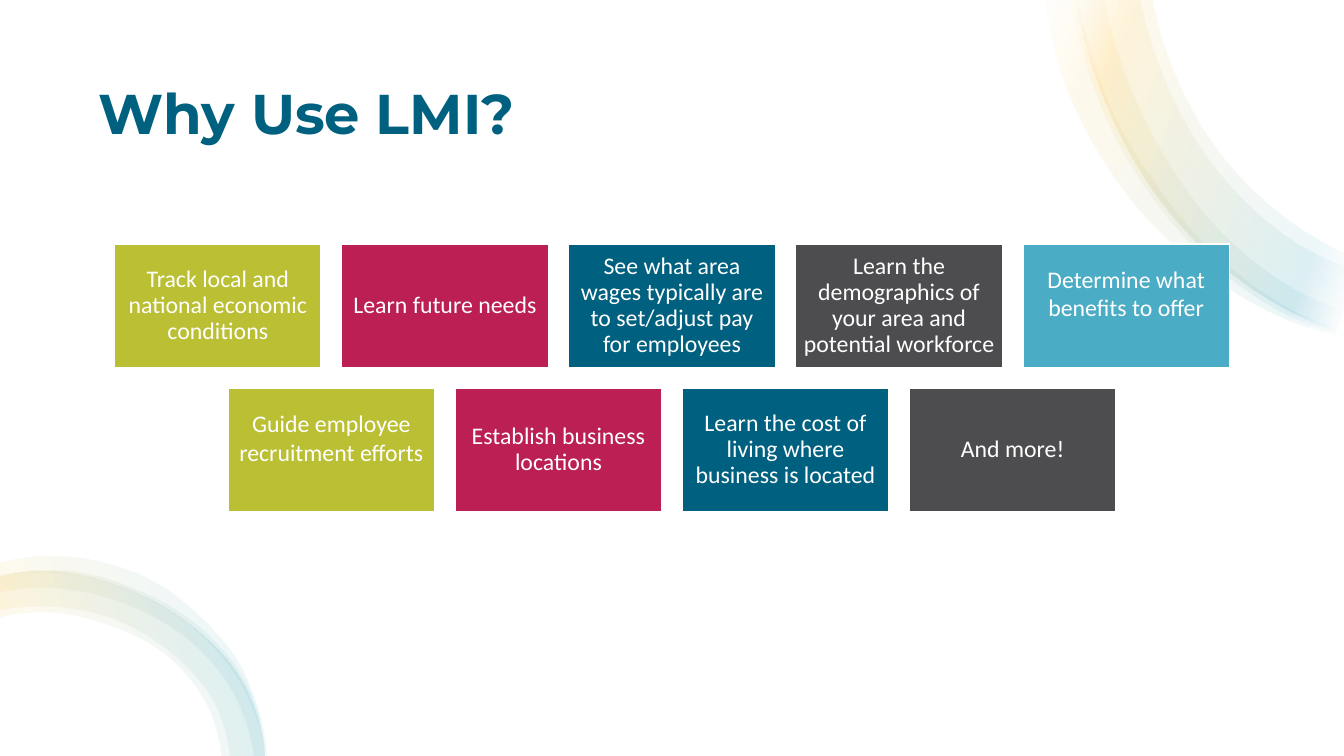
from dataclasses import dataclass
from math import dist

from pptx import Presentation
from pptx.dml.color import RGBColor
from pptx.enum.shapes import MSO_SHAPE
from pptx.enum.text import MSO_ANCHOR, PP_ALIGN
from pptx.oxml import parse_xml
from pptx.oxml.ns import nsdecls, qn
from pptx.slide import Slide
from pptx.util import Pt

RECTANGLE = MSO_SHAPE.RECTANGLE
MIDDLE = MSO_ANCHOR.MIDDLE
CENTER = PP_ALIGN.CENTER

COLORS = {
    "white": "FFFFFF",
    "lime": "BABF33",
    "berry": "BB1F53",
    "teal": "00607F",
    "charcoal": "4D4D4F",
    "sky": "4BACC6",
    "gold": "FFC843",
}
PAGE_WIDTH, PAGE_HEIGHT = 960, 540
CARD_WIDTH, CARD_HEIGHT = 147.6, 88.4
CARD_GAP = 14.6
CARDS_TOP = 174.2
CARD_INSET = 5
RIBBON_STOPS = ((2, "white"), (16, "sky"), (85, "gold"), (100, "white"))
RIBBON_OPACITY = 10
TOP_ANGLE, BOTTOM_ANGLE = 200, 160

Point = tuple[float, float]


@dataclass
class Ribbon:
    angle: int
    outer: list[Point]
    inner: list[Point]


@dataclass
class Card:
    text: str
    color: str
    line_spacing: float = 0.9
    extra_bottom: float = 0


TOP_EDGE = [(960, 239), (881, 197), (829, 144), (791, 77), (768, -6)]
BOTTOM_EDGE = [(189, 540), (170, 482), (133, 444), (84, 418), (29, 408), (0, 412)]

RIBBONS = [
    Ribbon(
        TOP_ANGLE,
        [(960, 241), (923, 230), (879, 207), (839, 176), (804, 138),
         (776, 94), (760, 58), (750, 19), (746, -6)],
        [(769, -6), (779, 37), (796, 83), (821, 125), (850, 163),
         (886, 197), (926, 223), (960, 236)],
    ),
    Ribbon(TOP_ANGLE, TOP_EDGE, [(822, -6), (834, 40), (878, 118), (941, 171), (960, 181)]),
    Ribbon(
        TOP_ANGLE,
        [(960, 240), (921, 226), (881, 201), (845, 168), (815, 129),
         (791, 86), (778, 51), (769, 14), (765, -6)],
        [(789, -6), (797, 32), (813, 75), (834, 115), (860, 152),
         (892, 184), (929, 209), (960, 222)],
    ),
    Ribbon(TOP_ANGLE, TOP_EDGE, [(813, -6), (826, 42), (871, 124), (937, 180), (960, 190)]),
    Ribbon(BOTTOM_ANGLE, BOTTOM_EDGE,
           [(0, 441), (29, 437), (77, 446), (120, 469), (148, 504), (158, 540)]),
    Ribbon(BOTTOM_ANGLE, BOTTOM_EDGE,
           [(0, 436), (29, 433), (78, 441), (122, 466), (153, 502), (164, 540)]),
    Ribbon(
        BOTTOM_ANGLE,
        [(189, 540), (186, 518), (178, 493), (146, 451), (102, 423),
         (50, 408), (22, 408), (0, 411)],
        [(0, 423), (24, 420), (48, 421), (96, 434), (138, 460), (168, 498), (181, 540)],
    ),
    Ribbon(
        BOTTOM_ANGLE,
        [(190, 540), (180, 495), (168, 470), (151, 449), (107, 414),
         (51, 398), (22, 398), (0, 402)],
        [(0, 412), (23, 409), (50, 410), (88, 420), (123, 438),
         (162, 474), (181, 508), (189, 540)],
    ),
]

CARD_ROWS = [
    [
        Card("Track local and national economic conditions", "lime"),
        Card("Learn future needs", "berry"),
        Card("See what area wages typically are to set/adjust pay for employees", "teal"),
        Card("Learn the demographics of your area and potential workforce", "charcoal"),
        Card("Determine what benefits to offer", "sky", 1.0, 18),
    ],
    [
        Card("Guide employee recruitment efforts", "lime", 1.0, 18),
        Card("Establish business locations", "berry"),
        Card("Learn the cost of living where business is located", "teal"),
        Card("And more!", "charcoal"),
    ],
]


def rgb(name: str) -> RGBColor:
    return RGBColor.from_string(COLORS[name])


def curve_points(knots: list[Point]) -> list[Point]:
    spans = [dist(a, b) for a, b in zip(knots, knots[1:])]
    slopes = [((b[0] - a[0]) / s, (b[1] - a[1]) / s) for a, b, s in zip(knots, knots[1:], spans)]
    tangents = [
        tuple((m * t + n * s) / (s + t) for m, n in zip(before, after))
        for before, after, s, t in zip(slopes, slopes[1:], spans, spans[1:])
    ]
    first = tuple(2 * m - n for m, n in zip(slopes[0], tangents[0]))
    last = tuple(2 * m - n for m, n in zip(slopes[-1], tangents[-1]))
    tangents = [first, *tangents, last]
    points = []
    for index, span in enumerate(spans):
        start, end = knots[index], knots[index + 1]
        leave, arrive = tangents[index], tangents[index + 1]
        points.append(tuple(p + m * span / 3 for p, m in zip(start, leave)))
        points.append(tuple(p - m * span / 3 for p, m in zip(end, arrive)))
        points.append(end)
    return points


def ribbon_gradient(angle: int):
    stops = "".join(
        f'<a:gs pos="{position * 1000}"><a:srgbClr val="{COLORS[name]}">'
        f'<a:alpha val="{RIBBON_OPACITY * 1000}"/></a:srgbClr></a:gs>'
        for position, name in RIBBON_STOPS
    )
    return parse_xml(
        f'<a:gradFill {nsdecls("a")} rotWithShape="1"><a:gsLst>{stops}</a:gsLst>'
        f'<a:lin ang="{angle * 60000}" scaled="0"/></a:gradFill>'
    )


def bend_lines(lines: list) -> None:
    for first, second, third in zip(lines[::3], lines[1::3], lines[2::3]):
        curve = parse_xml(f'<a:cubicBezTo {nsdecls("a")}/>')
        first.addprevious(curve)
        for line in (first, second, third):
            curve.append(line[0])
            line.getparent().remove(line)


def draw_ribbon(page: Slide, ribbon: Ribbon) -> None:
    outer, inner = curve_points(ribbon.outer), curve_points(ribbon.inner)
    outline = [ribbon.outer[0], *outer, ribbon.inner[0], *inner]
    corners = [(Pt(x), Pt(y)) for x, y in outline]
    builder = page.shapes.build_freeform(*corners[0])
    builder.add_line_segments(corners[1:], close=True)
    shape = builder.convert_to_shape()
    shape.shadow.inherit = False
    shape.line.fill.background()
    shape.fill.background()
    properties = shape._element.spPr
    properties.replace(properties.find(qn("a:noFill")), ribbon_gradient(ribbon.angle))
    lines = list(properties.iter(qn("a:lnTo")))
    bend_lines(lines[:len(outer)])
    bend_lines(lines[len(outer) + 1:len(outer) + 1 + len(inner)])


def draw_rectangle(page: Slide, left: float, top: float, width: float, height: float, color: str):
    box = page.shapes.add_shape(RECTANGLE, Pt(left), Pt(top), Pt(width), Pt(height))
    box.shadow.inherit = False
    box.fill.solid()
    box.fill.fore_color.rgb = rgb(color)
    box.line.fill.background()
    return box


def write_text(box, text: str, name: str, size: float, color: str, spacing: float):
    frame = box.text_frame
    frame.word_wrap = True
    frame.vertical_anchor = MIDDLE
    frame.text = text
    para = frame.paragraphs[0]
    para.line_spacing = spacing
    font = para.runs[0].font
    font.name, font.size = name, Pt(size)
    font.color.rgb = rgb(color)
    return para


def draw_title(page: Slide, text: str) -> None:
    box = page.shapes.add_textbox(Pt(63.4), Pt(36), Pt(833), Pt(93.6))
    para = write_text(box, text, "Montserrat", 40, "teal", 0.9)
    para.runs[0].font.bold = True


def draw_card(page: Slide, card: Card, left: float, top: float) -> None:
    box = draw_rectangle(page, left, top, CARD_WIDTH, CARD_HEIGHT, card.color)
    box.line.color.rgb = rgb("white")
    box.line.width = Pt(1)
    frame = box.text_frame
    frame.margin_left = frame.margin_right = frame.margin_top = Pt(CARD_INSET)
    frame.margin_bottom = Pt(CARD_INSET + card.extra_bottom)
    para = write_text(box, card.text, "Calibri", 17, "white", card.line_spacing)
    para.alignment = CENTER


def main() -> None:
    deck = Presentation()
    deck.slide_width, deck.slide_height = Pt(PAGE_WIDTH), Pt(PAGE_HEIGHT)
    page = deck.slides.add_slide(deck.slide_layouts[6])
    draw_rectangle(page, 0, 0, PAGE_WIDTH, PAGE_HEIGHT, "white")
    draw_title(page, "Why Use LMI?")
    for ribbon in RIBBONS:
        draw_ribbon(page, ribbon)
    for row, cards in enumerate(CARD_ROWS):
        row_width = len(cards) * (CARD_WIDTH + CARD_GAP) - CARD_GAP
        row_left = (PAGE_WIDTH - row_width) / 2
        top = CARDS_TOP + row * (CARD_HEIGHT + CARD_GAP)
        for column, card in enumerate(cards):
            draw_card(page, card, row_left + column * (CARD_WIDTH + CARD_GAP), top)
    deck.save("out.pptx")


if __name__ == "__main__":
    main()
